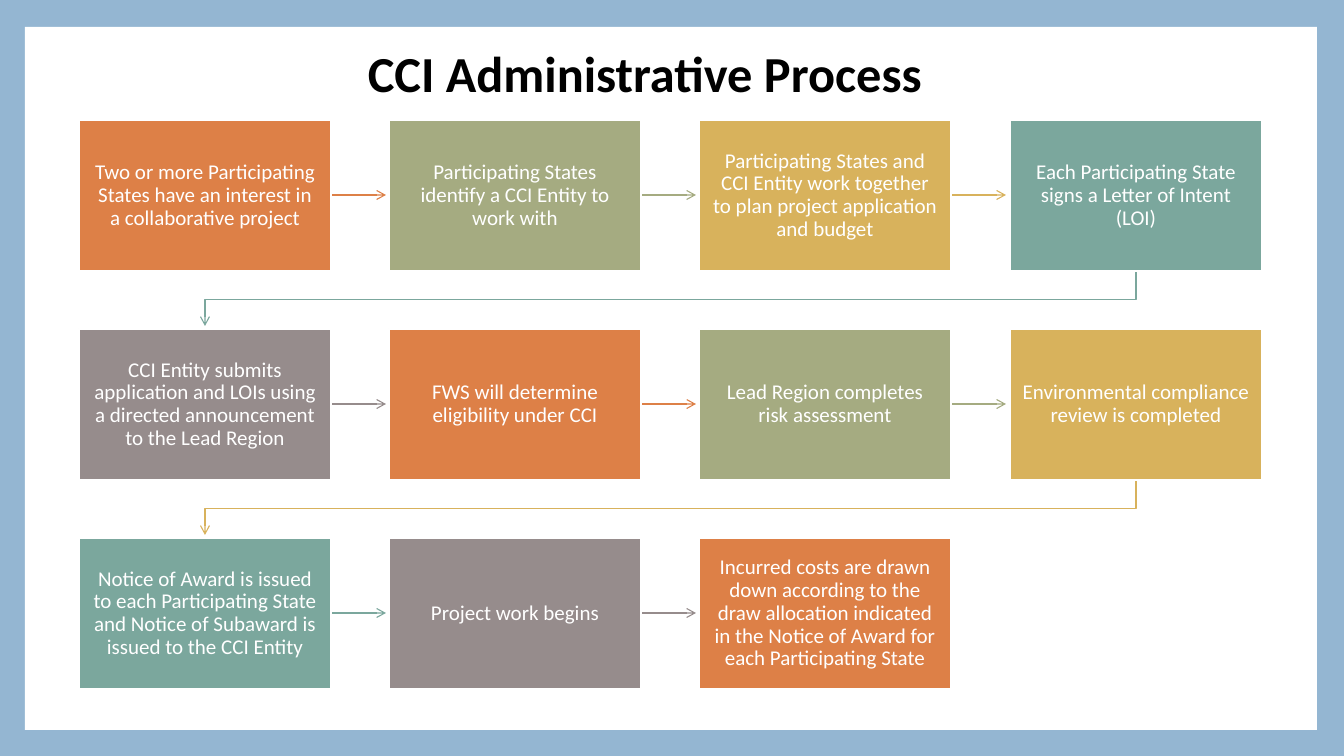
from dataclasses import dataclass

from lxml import etree
from pptx import Presentation
from pptx import util as u
from pptx.dml.color import RGBColor
from pptx.enum import shapes, text
from pptx.oxml.ns import qn

BLUE = RGBColor(0x94, 0xB6, 0xD2)
WHITE = RGBColor(0xFF, 0xFF, 0xFF)
BLACK = RGBColor(0x00, 0x00, 0x00)
ORANGE = RGBColor(0xDD, 0x80, 0x47)
GREEN = RGBColor(0xA5, 0xAB, 0x81)
GOLD = RGBColor(0xD8, 0xB2, 0x5C)
TEAL = RGBColor(0x7B, 0xA7, 0x9D)
GREY = RGBColor(0x96, 0x8C, 0x8C)
CYCLE = [ORANGE, GREEN, GOLD, TEAL, GREY]

FONT = "Calibri"
COLS = 4
LEFT, TOP = 79, 120  # first step box
WIDE, HIGH = 252, 151  # size of a step box
SPAN = 931  # from the first column to the last
DOWN = 209  # from one row to the next
REACH = 55  # how far an arrow runs from its box
BEND = 29  # drop before a row-change arrow turns

STEPS = [
    "Two or more Participating States have an interest in a collaborative project",
    "Participating States identify a CCI Entity to work with",
    "Participating States and CCI Entity work together to plan project application and budget",
    "Each Participating State signs a Letter of Intent (LOI)",
    "CCI Entity submits application and LOIs using a directed announcement to the Lead Region",
    "FWS will determine eligibility under CCI",
    "Lead Region completes risk assessment",
    "Environmental compliance review is completed",
    "Notice of Award is issued to each Participating State and Notice of Subaward is issued to the CCI Entity",
    "Project work begins",
    "Incurred costs are drawn down according to the draw allocation indicated in the Notice of Award for each Participating State",
]


@dataclass
class Step:
    words: str
    x: int
    y: int
    color: RGBColor
    ends_row: bool


def px(n: int) -> u.Emu:
    return u.Emu(round(n * 914400 / 100.8))


def write(frame, words: str, *, size: int, color: RGBColor,
          bold: bool = False, lead: float = 1.0) -> None:
    frame.word_wrap = True
    para = frame.paragraphs[0]
    para.alignment = text.PP_ALIGN.CENTER
    para.line_spacing = lead
    run = para.add_run()
    run.text = words
    font = run.font
    font.name, font.size, font.bold = FONT, u.Pt(size), bold
    font.color.rgb = color


def block(slide, x: int, y: int, w: int, h: int, color: RGBColor):
    shape = slide.shapes.add_shape(
        shapes.MSO_SHAPE.RECTANGLE, px(x), px(y), px(w), px(h))
    shape.shadow.inherit = False
    shape.fill.solid()
    shape.fill.fore_color.rgb = color
    shape.line.fill.background()
    return shape


def arrow(slide, points: list[tuple[int, int]], color: RGBColor) -> None:
    spots = [(px(x), px(y)) for x, y in points]
    if len(spots) == 2:
        shape = slide.shapes.add_connector(
            shapes.MSO_CONNECTOR.STRAIGHT, *spots[0], *spots[1])
    else:
        pen = slide.shapes.build_freeform(*spots[0])
        pen.add_line_segments(spots[1:], close=False)
        shape = pen.convert_to_shape()
        shape.fill.background()
    shape.line.color.rgb = color
    shape.line.width = u.Pt(0.79)
    props = shape.element.spPr
    etree.SubElement(props.find(qn("a:ln")), qn("a:tailEnd"), type="arrow")
    etree.SubElement(props, qn("a:effectLst"))


def link(slide, step: Step) -> None:
    """Draw the arrow that leads from a step to the next one."""
    if step.ends_row:
        mid, home, base = step.x + WIDE // 2, LEFT + WIDE // 2, step.y + HIGH
        points = [(mid, base), (mid, base + BEND),
                  (home, base + BEND), (home, base + REACH)]
    else:
        edge, mid = step.x + WIDE, step.y + HIGH // 2
        points = [(edge, mid), (edge + REACH, mid)]
    arrow(slide, points, step.color)


def card(slide, step: Step) -> None:
    shape = block(slide, step.x, step.y, WIDE, HIGH, step.color)
    shape.line.color.rgb = WHITE
    shape.line.width = u.Pt(1.5)
    frame = shape.text_frame
    frame.margin_left = frame.margin_right = px(12)
    frame.margin_top = frame.margin_bottom = px(13)
    frame.vertical_anchor = text.MSO_ANCHOR.MIDDLE
    write(frame, step.words, size=15, color=WHITE, lead=0.9)


def plan() -> list[Step]:
    steps = []
    for i, words in enumerate(STEPS):
        row, col = divmod(i, COLS)
        steps.append(Step(words, LEFT + col * SPAN // (COLS - 1),
                          TOP + row * DOWN, CYCLE[i % len(CYCLE)],
                          col == COLS - 1))
    return steps


def main() -> None:
    deck = Presentation()
    deck.slide_width, deck.slide_height = px(1344), px(756)
    slide = deck.slides.add_slide(deck.slide_layouts[6])

    # Blue frame around a white page
    slide.background.fill.solid()
    slide.background.fill.fore_color.rgb = BLUE
    block(slide, 25, 27, 1292, 703, WHITE)

    # Process steps, each arrow behind its box
    steps = plan()
    for step in steps:
        if step is not steps[-1]:
            link(slide, step)
        card(slide, step)

    # Title
    title = slide.shapes.add_textbox(px(134), px(37), px(1022), px(71))
    title.text_frame.auto_size = text.MSO_AUTO_SIZE.SHAPE_TO_FIT_TEXT
    write(title.text_frame, "CCI Administrative Process",
          size=36, color=BLACK, bold=True)

    deck.save("out.pptx")


if __name__ == "__main__":
    main()
